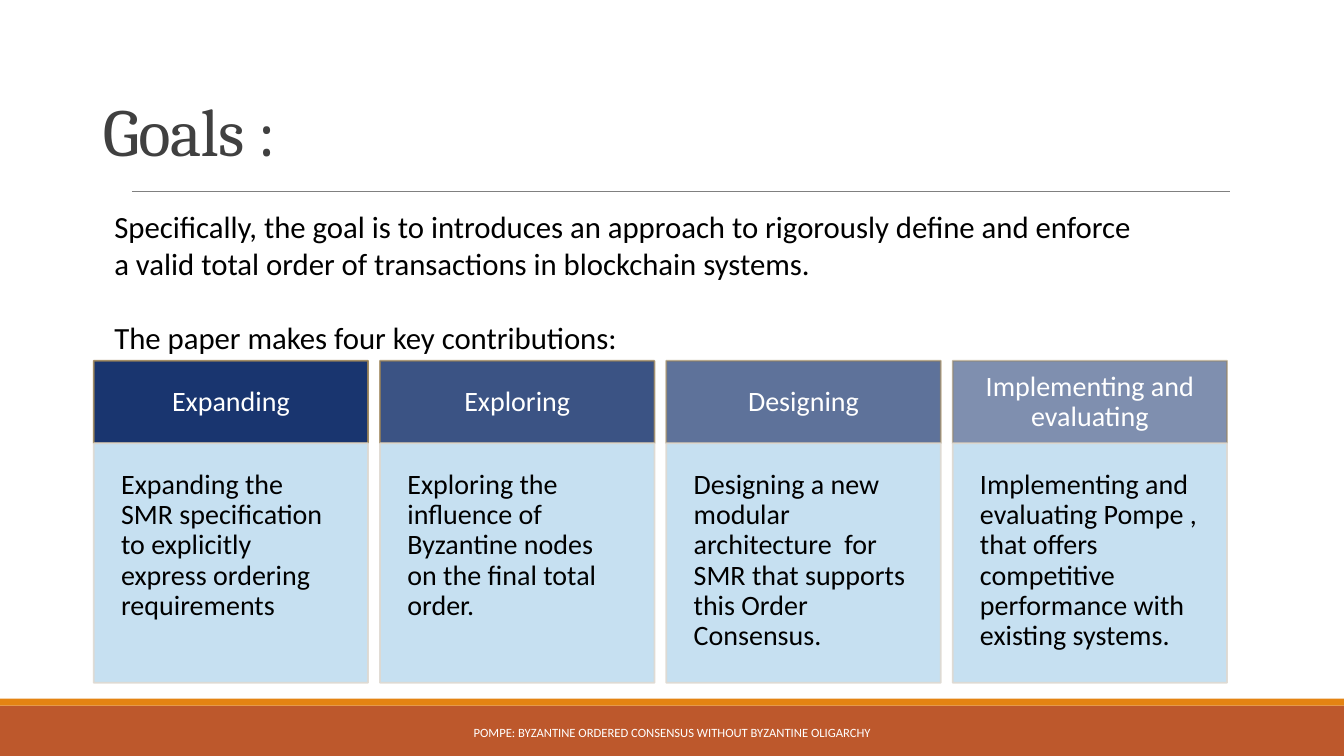
from lxml import etree
from pptx import Presentation
from pptx.dml.color import RGBColor
from pptx.enum.shapes import MSO_CONNECTOR, MSO_SHAPE
from pptx.enum.text import MSO_ANCHOR, MSO_AUTO_SIZE, PP_ALIGN
from pptx.oxml.ns import qn
from pptx.util import Pt

RECTANGLE = MSO_SHAPE.RECTANGLE
STRAIGHT = MSO_CONNECTOR.STRAIGHT
TOP, MIDDLE, BOTTOM = MSO_ANCHOR.TOP, MSO_ANCHOR.MIDDLE, MSO_ANCHOR.BOTTOM
LEFT, CENTER = PP_ALIGN.LEFT, PP_ALIGN.CENTER
NO_AUTOFIT = MSO_AUTO_SIZE.NONE

WHITE = RGBColor(0xFF, 0xFF, 0xFF)
BLACK = RGBColor(0x00, 0x00, 0x00)
TITLE_GRAY = RGBColor(0x40, 0x40, 0x40)
GRAY = RGBColor(0x80, 0x80, 0x80)
RUST = RGBColor(0xBD, 0x58, 0x2C)
ORANGE = RGBColor(0xE4, 0x83, 0x12)
NAVY = RGBColor(0x00, 0x20, 0x60)
TAN = RGBColor(0x9B, 0x83, 0x57)
PALE_BLUE = RGBColor(0xC0, 0xDD, 0xF0)
PALE_TAN = RGBColor(0xDE, 0xD9, 0xD1)

INTRODUCTION = [
    "Specifically, the goal is to introduces an approach to rigorously define and enforce "
    "a valid total order of transactions in blockchain systems.",
    "The paper makes four key contributions:",
]
CONTRIBUTIONS = [
    ("Expanding", 90,
     "Expanding the SMR specification to explicitly express ordering requirements"),
    ("Exploring", 77,
     "Exploring the influence of Byzantine nodes on the final total order."),
    ("Designing", 63,
     "Designing a new modular architecture  for SMR that supports this Order Consensus."),
    ("Implementing and evaluating", 50,
     "Implementing and evaluating Pompe , that offers competitive performance "
     "with existing systems."),
]


def write_text(shape, texts, size, color, font="Calibri", align=LEFT, anchor=TOP,
               line_spacing=1.0, gap=0, insets=(7.2, 3.6)):
    """Fill a shape with formatted paragraphs, separated by gap points."""
    frame = shape.text_frame
    frame.word_wrap = True
    frame.auto_size = NO_AUTOFIT
    frame.vertical_anchor = anchor
    frame.margin_left = frame.margin_right = Pt(insets[0])
    frame.margin_top = frame.margin_bottom = Pt(insets[1])
    for index, text in enumerate(texts):
        paragraph = frame.add_paragraph() if index else frame.paragraphs[0]
        paragraph.alignment = align
        paragraph.line_spacing = line_spacing
        paragraph.space_before = Pt(gap if index else 0)
        run = paragraph.add_run()
        run.text = text
        run.font.name = font
        run.font.size = Pt(size)
        run.font.color.rgb = color


def add_text(slide, box, texts, **text_format):
    """Add a text box at the given box in points."""
    shape = slide.shapes.add_textbox(*map(Pt, box))
    write_text(shape, texts, **text_format)


def set_opacity(shape, percent):
    """Make the fill and line of a shape partly transparent."""
    for color in shape.fill._xPr.iter(qn("a:srgbClr")):
        etree.SubElement(color, qn("a:alpha"), val=str(percent * 1000))


def add_rectangle(slide, box, fill, line=None, opacity=100):
    """Add a flat rectangle at the given box in points."""
    shape = slide.shapes.add_shape(RECTANGLE, *map(Pt, box))
    shape.shadow.inherit = False
    shape.fill.solid()
    shape.fill.fore_color.rgb = fill
    if line is None:
        shape.line.fill.background()
    else:
        shape.line.color.rgb = line
        shape.line.width = Pt(1.25)
    if opacity < 100:
        set_opacity(shape, opacity)
    return shape


def add_title(slide, box, text):
    """Place the title and the rule below it."""
    left, top, width, height = box
    title = slide.shapes.title
    title.left, title.top, title.width, title.height = map(Pt, box)
    write_text(title, [text], 48, TITLE_GRAY, font="Cambria", anchor=BOTTOM,
               line_spacing=0.85)
    title.text_frame.paragraphs[0].runs[0].font._element.set("spc", "-50")
    rule_top = Pt(top + height + 11.5)
    rule = slide.shapes.add_connector(STRAIGHT, Pt(left + 28), rule_top,
                                      Pt(left + width - 14.5), rule_top)
    rule.line.color.rgb = GRAY
    rule.line.width = Pt(0.5)
    etree.SubElement(rule._element.spPr, qn("a:effectLst"))


def add_contributions(slide, box, contributions, gap=8.5, header_height=59):
    """Place equal columns, each with a header over a description."""
    left, top, width, height = box
    count = len(contributions)
    column_width = (width - gap * (count - 1)) / count
    for index, (heading, opacity, description) in enumerate(contributions):
        column_left = left + index * (column_width + gap)
        header = add_rectangle(slide, (column_left, top, column_width, header_height),
                               NAVY, TAN, opacity)
        write_text(header, [heading], 20, WHITE, align=CENTER, anchor=MIDDLE,
                   line_spacing=0.9, insets=(16, 4))
        body = add_rectangle(
            slide, (column_left, top + header_height, column_width, height - header_height),
            PALE_BLUE, PALE_TAN, 90)
        write_text(body, [description], 20, BLACK, line_spacing=0.9, insets=(19.5, 19.2))


def add_footer(slide, box, text):
    """Place the footer band with its centred text."""
    left, top, width, height = box
    add_rectangle(slide, (left, top + 5, width, height - 5), RUST)
    add_rectangle(slide, (left, top, width, 5), ORANGE)
    add_text(slide, (left + 290.2, top + 9.5, 379.6, 29), [text], size=9, color=WHITE,
             align=CENTER, anchor=MIDDLE)


def build_goals_slide(presentation):
    """Build the goals slide from its regions."""
    slide = presentation.slides.add_slide(presentation.slide_layouts[5])
    add_footer(slide, (0, 499, 960, 41),
               "POMPE: BYZANTINE ORDERED CONSENSUS WITHOUT BYZANTINE OLIGARCHY")
    add_title(slide, (66.3, 45, 827, 80), "Goals :")
    add_text(slide, (74.6, 145, 742, 140), INTRODUCTION, size=22, color=BLACK, gap=26.5)
    add_contributions(slide, (67, 257.7, 809.5, 230), CONTRIBUTIONS)


def main():
    """Create and save the presentation."""
    presentation = Presentation()
    presentation.slide_width, presentation.slide_height = Pt(960), Pt(540)
    build_goals_slide(presentation)
    presentation.save("out.pptx")


if __name__ == "__main__":
    main()
